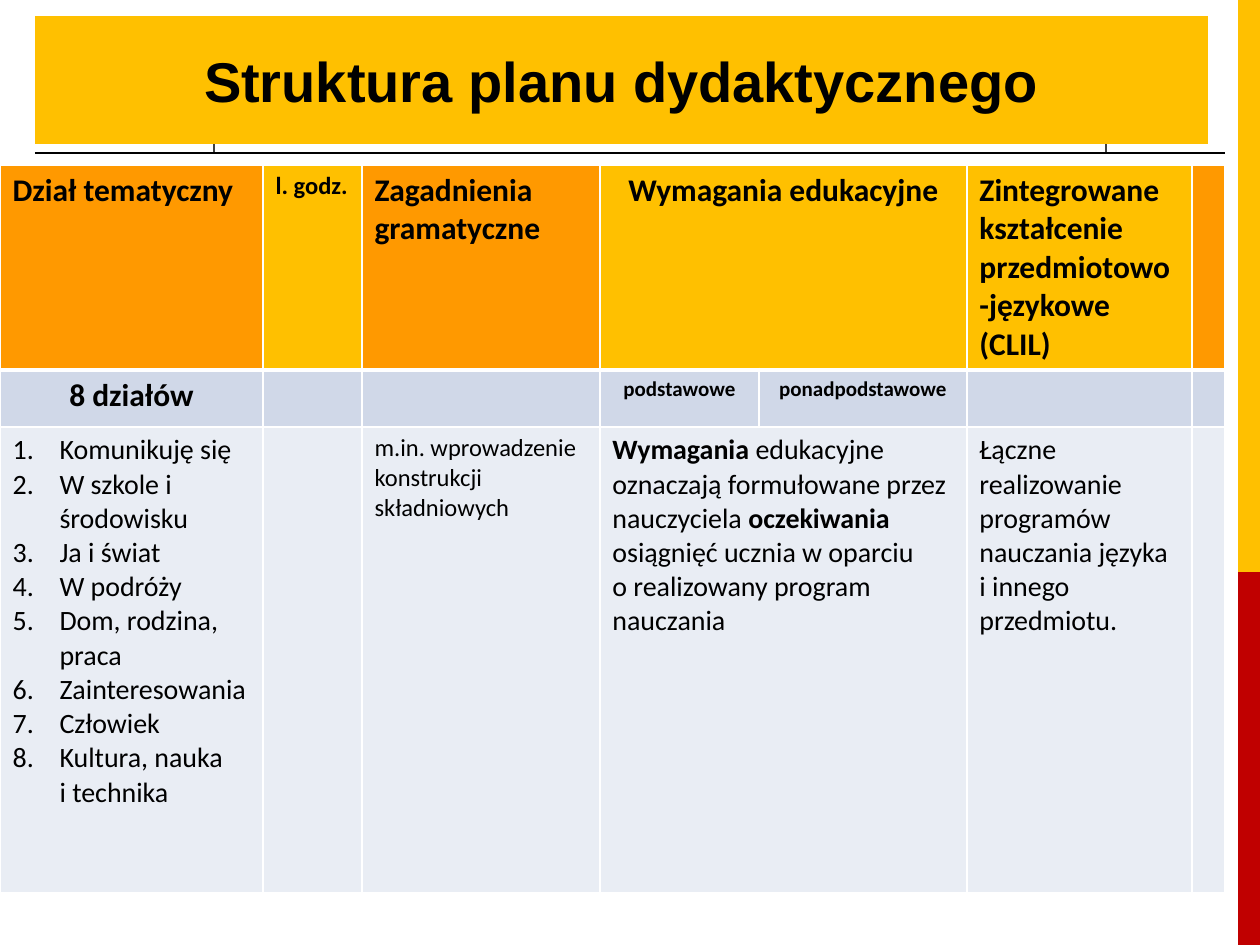
from lxml import etree
from pptx import Presentation
from pptx import util as u
from pptx.dml.color import RGBColor
from pptx.enum import shapes, text
from pptx.oxml import ns

SCALE = 914400 / 126  # EMU in one px
COLORS = {
    "ink": "000000", "guide": "404040", "white": "FFFFFF",
    "yellow": "FFC000", "orange": "FF9900", "red": "C00000",
    "subhead": "D0D8E8", "body": "E9EDF4",
}


def px(length):
    return u.Emu(round(length * SCALE))


def color(name):
    return RGBColor.from_string(COLORS[name])


def add_text(para, words, size=18, bold=False, font="Calibri", align=None):
    """Write words into a paragraph; a line feed becomes a line break."""
    if align is not None:
        para.alignment = align
    for index, line in enumerate(words.split("\n")):
        if index:
            para.add_line_break()
        span = para.add_run()
        span.text = line
        span.font.size = u.Pt(size)
        span.font.bold = bold
        span.font.name = font
        span.font.color.rgb = color("ink")


class SlideBuilder:
    def __init__(self, slide):
        self.slide = slide

    def line(self, left, top, right, bottom, ink):
        line = self.slide.shapes.add_connector(
            shapes.MSO_CONNECTOR.STRAIGHT, px(left), px(top), px(right), px(bottom))
        line.line.color.rgb = color(ink)
        line.line.width = u.Pt(0.75)
        etree.SubElement(line._element.spPr, ns.qn("a:effectLst"))

    def band(self, left, top, width, height, fill):
        box = self.slide.shapes.add_shape(
            shapes.MSO_SHAPE.RECTANGLE, px(left), px(top), px(width), px(height))
        box.shadow.inherit = False
        box.fill.solid()
        box.fill.fore_color.rgb = color(fill)
        box.line.fill.background()

    def title(self, words, left, top, width, height):
        box = self.slide.shapes.title
        box.left, box.top, box.width, box.height = map(px, (left, top, width, height))
        box.fill.solid()
        box.fill.fore_color.rgb = color("yellow")
        frame = box.text_frame
        frame.word_wrap = True
        frame.vertical_anchor = text.MSO_ANCHOR.MIDDLE
        add_text(frame.paragraphs[0], words, size=32, bold=True, font="Arial",
                 align=text.PP_ALIGN.CENTER)
        self.slide.shapes._spTree.append(box._element)  # in front of the lines

    def table(self, left, top, widths, heights):
        table = self.slide.shapes.add_table(
            len(heights), len(widths), px(left), px(top),
            px(sum(widths)), px(sum(heights))).table
        for column, width in zip(table.columns, widths):
            column.width = px(width)
        for row, height in zip(table.rows, heights):
            row.height = px(height)
        return table

    def cell(self, cell, fill, words="", **style):
        cell.fill.solid()
        cell.fill.fore_color.rgb = color(fill)
        if words:
            add_text(cell.text_frame.paragraphs[0], words, **style)

    def borders(self, cell, **widths):
        properties = cell._tc.get_or_add_tcPr()
        for index, (side, width) in enumerate(widths.items()):
            border = etree.Element(ns.qn("a:ln" + side), w=str(u.Pt(width)))
            solid = etree.SubElement(border, ns.qn("a:solidFill"))
            etree.SubElement(solid, ns.qn("a:srgbClr"), val=COLORS["white"])
            properties.insert(index, border)

    def numbered(self, cell, items, indent, **style):
        frame = cell.text_frame
        for index, item in enumerate(items):
            para = frame.add_paragraph() if index else frame.paragraphs[0]
            properties = para._p.get_or_add_pPr()
            properties.set("marL", str(px(indent)))
            properties.set("indent", str(-px(indent)))
            etree.SubElement(properties, ns.qn("a:buFont"), typeface="+mj-lt")
            etree.SubElement(properties, ns.qn("a:buAutoNum"), type="arabicPeriod")
            add_text(para, item, **style)


def main():
    deck = Presentation()
    deck.slide_width, deck.slide_height = px(1260), px(945)
    page = SlideBuilder(deck.slides.add_slide(deck.slide_layouts[5]))
    center = text.PP_ALIGN.CENTER

    # Frame lines and side bands
    for x in (214, 1106):
        page.line(x, 17, x, 153, "guide")
    page.band(1238, 572, 22, 373, "red")
    page.band(1238, 0, 22, 572, "yellow")
    page.line(35, 153, 1225, 153, "ink")

    page.title("Struktura planu dydaktycznego", 35, 16, 1173, 128)

    # Table grid
    table = page.table(0, 165, [263, 99, 238, 159, 208, 225, 33], [181, 57, 466])
    for row in (0, 2):
        table.cell(row, 3).merge(table.cell(row, 4))

    # Header row
    header = [
        ("orange", "Dział tematyczny", {}),
        ("yellow", "l. godz.", {"size": 14}),
        ("orange", "Zagadnienia gramatyczne", {}),
        ("yellow", "Wymagania edukacyjne", {"align": center}),
        ("yellow", "", {}),
        ("yellow", "Zintegrowane kształcenie przedmiotowo-językowe (CLIL)", {}),
        ("orange", "", {}),
    ]
    for column, (fill, words, style) in enumerate(header):
        cell = table.cell(0, column)
        if not cell.is_spanned:
            page.cell(cell, fill, words, bold=True, **style)
        page.borders(cell, L=1, R=1, T=1, B=3)

    # Subheading row
    subheads = {0: ("8 działów", 18), 3: ("podstawowe", 12), 4: ("ponadpodstawowe", 12)}
    for column in range(len(header)):
        words, size = subheads.get(column, ("", 18))
        page.cell(table.cell(1, column), "subhead", words,
                  size=size, bold=True, align=center)

    # Content row
    contents = {
        2: ("m.in. wprowadzenie konstrukcji składniowych", 14),
        5: ("Łączne realizowanie programów nauczania języka i innego przedmiotu.", 16),
    }
    for column in range(len(header)):
        words, size = contents.get(column, ("", 16))
        page.cell(table.cell(2, column), "body", words, size=size)

    topics = ["Komunikuję się", "W szkole i środowisku", "Ja i świat", "W podróży",
              "Dom, rodzina, praca", "Zainteresowania", "Człowiek",
              "Kultura, nauka \ni technika"]
    page.numbered(table.cell(2, 0), topics, 47, size=16)

    requirements = table.cell(2, 3).text_frame.paragraphs[0]
    for words, bold in [
        ("Wymagania", True),
        (" edukacyjne oznaczają formułowane przez nauczyciela ", False),
        ("oczekiwania ", True),
        ("osiągnięć ucznia w oparciu \no realizowany program nauczania", False),
    ]:
        add_text(requirements, words, size=16, bold=bold)

    deck.save("out.pptx")


if __name__ == "__main__":
    main()
